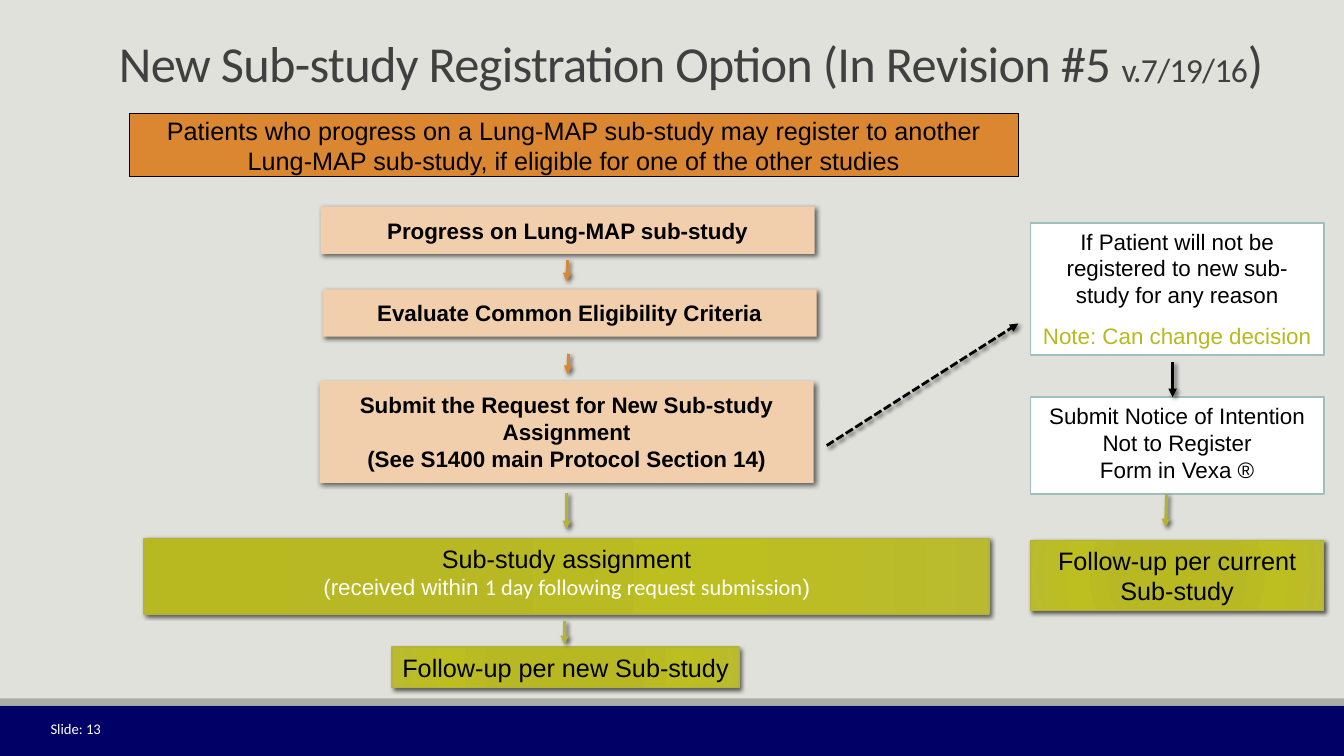
from lxml import etree
from pptx import Presentation
from pptx.dml.color import RGBColor
from pptx.enum.dml import MSO_LINE
from pptx.enum.shapes import MSO_CONNECTOR, MSO_SHAPE
from pptx.enum.text import MSO_ANCHOR, MSO_AUTO_SIZE, PP_ALIGN
from pptx.oxml.ns import qn
from pptx.util import Inches, Pt

RECT = MSO_SHAPE.RECTANGLE
LINE = MSO_CONNECTOR.STRAIGHT
DASH = MSO_LINE.SQUARE_DOT
TOP, MID, LOW = MSO_ANCHOR.TOP, MSO_ANCHOR.MIDDLE, MSO_ANCHOR.BOTTOM
LEFT, MEAN, RIGHT = PP_ALIGN.LEFT, PP_ALIGN.CENTER, PP_ALIGN.RIGHT
NONE = MSO_AUTO_SIZE.NONE

BLACK, WHITE, NAVY, GREY = "000000", "FFFFFF", "000066", "ACADA8"
ORANGE, PEACH, OLIVE, LIME = "DB8631", "F1CFAD", "B3B435", "B8B91F"
TEAL, DARK, PAPER = "9DBFBE", "404040", "E1E1DB"
STOPS = ((0, "B8B920"), (34, "B7B823"), (70, "BDBE20"), (100, "B9BA2F"))


def tint(code):
    """Turn a hex string into a colour."""
    return RGBColor.from_string(code)


def assign(item, values):
    """Set each attribute in a dict of format values."""
    for name, value in values.items():
        setattr(item, name, value)


def node(parent, tag, **attrs):
    """Append a drawing element with its attributes."""
    return etree.SubElement(parent, qn("a:" + tag), {k: str(v) for k, v in attrs.items()})


def shade(parent, blur):
    """Append a soft shadow to an effect list."""
    shadow = node(parent, "outerShdw", blurRad=Pt(blur), dist=Pt(2), dir=45 * 60000,
                  algn="tl", rotWithShape=0)
    node(node(shadow, "srgbClr", val=BLACK), "alpha", val=60000)


class Deck:
    """Hold the style and the current slide."""

    def __init__(self):
        """Open a title-only slide with a plain background."""
        self.show = Presentation()
        assign(self.show, {"slide_width": Inches(13.33), "slide_height": Inches(7.5)})
        self.slide = self.show.slides.add_slide(self.show.slide_layouts[5])
        back = self.slide.background.fill
        back.solid()
        back.fore_color.rgb = tint(PAPER)
        self.base = {"name": "Arial", "size": 18, "bold": False, "color": BLACK}

    def text(self, shape, paras, anchor=MID, align=MEAN, pad=0.05, after=0, lead=None, **style):
        """Fill a shape with paragraphs of (text, style) runs."""
        frame = shape.text_frame
        assign(frame, {"word_wrap": True, "auto_size": NONE, "vertical_anchor": anchor,
                       "margin_left": Inches(0.1), "margin_right": Inches(0.1),
                       "margin_top": Inches(pad), "margin_bottom": Inches(pad)})
        for i, runs in enumerate(paras):
            para = frame.add_paragraph() if i else frame.paragraphs[0]
            assign(para, {"alignment": align, "space_after": Pt(after), "line_spacing": lead})
            for words, extra in runs:
                self.span(para, words, {**self.base, **style, **extra})

    def span(self, para, words, style):
        """Add styled text, breaking the line at each newline."""
        for i, part in enumerate(words.split("\n")):
            if i:
                para.add_line_break()
            run = para.add_run()
            run.text = part
            assign(run.font, {"name": style["name"], "size": Pt(style["size"]),
                              "bold": style["bold"]})
            run.font.color.rgb = tint(style["color"])
            if "space" in style:
                run.font._element.set("spc", str(style["space"]))

    def title(self, place, runs, **style):
        """Move and fill the title placeholder."""
        head = self.slide.shapes.title
        assign(head, dict(zip(("left", "top", "width", "height"), map(Inches, place))))
        self.text(head, [runs], anchor=LOW, align=LEFT, lead=0.85, **style)

    def label(self, place, words, **style):
        """Add a text box."""
        box = self.slide.shapes.add_textbox(*map(Inches, place))
        self.text(box, [[(words, {})]], **style)

    def box(self, place, fill, paras=(), edge=None, width=1, blur=0, **style):
        """Add a filled rectangle, with a radial or linear blend if asked."""
        shape = self.slide.shapes.add_shape(RECT, *map(Inches, place))
        if fill in ("linear", "radial"):
            self.blend(shape, fill)
        else:
            shape.fill.solid()
            shape.fill.fore_color.rgb = tint(fill)
        if edge:
            shape.line.color.rgb = tint(edge)
            shape.line.width = Pt(width)
        else:
            shape.line.fill.background()
        shape.shadow.inherit = False
        if blur:
            shade(shape._element.spPr.find(qn("a:effectLst")), blur)
        if paras:
            self.text(shape, paras, **style)

    def blend(self, shape, kind):
        """Give a shape the green gradient."""
        shape.fill.gradient()
        grad = shape._element.spPr.find(qn("a:gradFill"))
        for child in list(grad):
            grad.remove(child)
        stops = node(grad, "gsLst")
        for spot, code in STOPS:
            node(node(stops, "gs", pos=spot * 1000), "srgbClr", val=code)
        if kind == "linear":
            node(grad, "lin", ang=0, scaled=0)
        else:
            sides = dict.fromkeys("ltrb", 100000)
            node(node(grad, "path", **{"path": "circle"}), "fillToRect", **sides)

    def arrow(self, ends, color, dash=None):
        """Add a shadowed arrow."""
        link = self.slide.shapes.add_connector(LINE, *map(Inches, ends))
        link.line.color.rgb = tint(color)
        assign(link.line, {"width": Pt(2), "dash_style": dash})
        node(link.line._get_or_add_ln(), "tailEnd", type="triangle")
        shade(node(link._element.spPr, "effectLst"), 3)


def main():
    """Build the slide."""
    deck = Deck()
    deck.box((0, 7, 13.33, 0.5), NAVY)
    deck.box((0, 6.93, 13.33, 0.07), GREY)
    deck.label((0.07, 7.03, 1.03, 0.4), "Slide: 13", align=RIGHT,
               name="Calibri", size=10.5, color=WHITE)
    deck.title((1.08, 0.23, 12.25, 0.74),
               [("New Sub-study Registration Option (In Revision #5 ", {}),
                ("v.7/19/16", {"size": 24}), (")", {})],
               name="Calibri", size=36, color=DARK, space=-50)

    deck.box((1.28, 1.13, 8.82, 0.62), ORANGE,
             [[("Patients who progress on a Lung-MAP sub-study may register to another "
                "Lung-MAP sub-study, if eligible for one of the other studies", {})]],
             edge=BLACK, width=0.75, pad=0.1)

    steps = (
        (3.18, 2.05, 0.47, ["Progress on Lung-MAP sub-study"]),
        (3.2, 2.87, 0.47, ["Evaluate Common Eligibility Criteria"]),
        (3.17, 3.78, 1.01, ["Submit the Request for New Sub-study Assignment",
                            "(See S1400 main Protocol Section 14)"]),
    )
    for left, top, high, lines in steps:
        deck.box((left, top, 4.9, high), PEACH, [[(line, {})] for line in lines],
                 blur=3.5, pad=0.1, size=16, bold=True)

    small = {"size": 16, "color": WHITE}
    deck.box((1.43, 5.34, 8.38, 0.75), "linear",
             [[("Sub-study assignment", {})],
              [("(received within ", small),
               ("1 day following request submission", {**small, "name": "Calibri"}),
               (")", small)]],
             edge=OLIVE, blur=3, anchor=TOP)

    exits = (
        (2.21, 1.31, [[("If Patient will not be registered to new sub-study for any reason", {})],
                      [("Note: Can change decision", {"color": LIME})]]),
        (3.94, 0.96, [[("Submit Notice of Intention Not to Register\nForm in Vexa ®", {})]]),
    )
    for top, high, paras in exits:
        deck.box((10.22, top, 2.91, high), WHITE, paras, edge=TEAL, width=1.25,
                 anchor=TOP, after=10, size=16)

    for place, name in (((10.22, 5.36, 2.91, 0.7), "current"), ((3.89, 6.42, 3.44, 0.4), "new")):
        deck.box(place, "radial", [[(f"Follow-up per {name} Sub-study", {})]],
                 edge=OLIVE, blur=3, after=2)

    arrows = (
        ((5.63, 2.58, 5.62, 2.79), ORANGE),
        ((5.64, 3.51, 5.63, 3.71), ORANGE),
        ((5.62, 4.89, 5.62, 5.25), OLIVE),
        ((5.6, 6.16, 5.6, 6.39), OLIVE),
        ((8.2, 4.42, 10.1, 3.21), BLACK, DASH),
        ((11.63, 3.59, 11.63, 3.94), BLACK),
        ((11.57, 4.9, 11.56, 5.23), OLIVE),
    )
    for arrow in arrows:
        deck.arrow(*arrow)
    deck.show.save("out.pptx")


if __name__ == "__main__":
    main()
